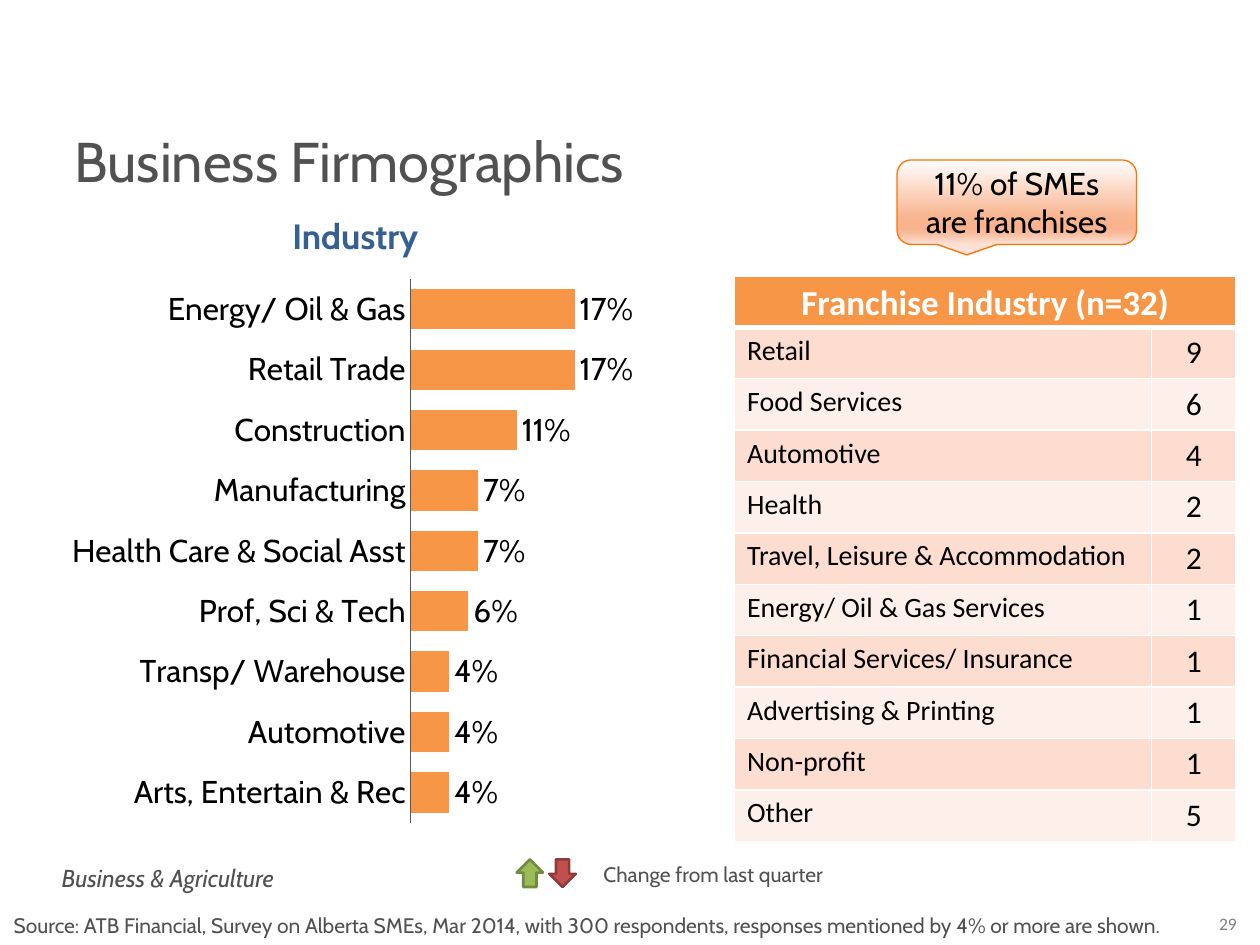
from lxml import etree
from pptx import Presentation
from pptx.chart.data import CategoryChartData
from pptx.dml.color import RGBColor
from pptx.enum.chart import XL_CHART_TYPE, XL_LABEL_POSITION, XL_TICK_LABEL_POSITION, XL_TICK_MARK
from pptx.enum.shapes import MSO_SHAPE
from pptx.enum.text import MSO_ANCHOR, PP_ALIGN
from pptx.oxml import parse_xml
from pptx.oxml.ns import nsdecls, qn
from pptx.util import Inches, Pt

LEFT, CENTER = PP_ALIGN.LEFT, PP_ALIGN.CENTER
TOP, MIDDLE = MSO_ANCHOR.TOP, MSO_ANCHOR.MIDDLE
BAR = XL_CHART_TYPE.BAR_CLUSTERED
OUTSIDE_END = XL_LABEL_POSITION.OUTSIDE_END
NO_TICK, NO_LABELS = XL_TICK_MARK.NONE, XL_TICK_LABEL_POSITION.NONE
CALLOUT, DOWN_ARROW = MSO_SHAPE.ROUNDED_RECTANGULAR_CALLOUT, MSO_SHAPE.DOWN_ARROW

COLUMNS, ROWS = 100, 75
WIDTH, HEIGHT = Inches(10), Inches(7.5)
GRAY, ORANGE, WHITE, BLACK = "505150", "F79646", "FFFFFF", "000000"
BANDS = ["FCDDCF", "FDEFE9"]
CALLOUT_STOPS = [(0, "FFFEFE"), (68, "F9B590"), (81, "F9B38C"), (86, "F9BA99"), (100, "FCE1D6")]
INDUSTRIES = [
    ("Energy/ Oil & Gas", 0.17), ("Retail Trade", 0.17), ("Construction", 0.11),
    ("Manufacturing", 0.07), ("Health Care & Social Asst", 0.07), ("Prof, Sci & Tech", 0.06),
    ("Transp/ Warehouse", 0.04), ("Automotive", 0.04), ("Arts, Entertain & Rec", 0.04),
]
FRANCHISES = [
    ("Retail", 9), ("Food Services", 6), ("Automotive", 4), ("Health", 2),
    ("Travel, Leisure & Accommodation", 2), ("Energy/ Oil & Gas Services", 1),
    ("Financial Services/ Insurance", 1), ("Advertising & Printing", 1),
    ("Non-profit", 1), ("Other", 5),
]


def color(hex_string):
    return RGBColor.from_string(hex_string)


def across(columns):
    return round(WIDTH * columns / COLUMNS)


def down(rows):
    return round(HEIGHT * rows / ROWS)


def place(box):
    left, top, width, height = box
    return across(left), down(top), across(width), down(height)


def style_font(font, size, hex_string, name="Cabin", bold=False, italic=False):
    font.name, font.size, font.bold, font.italic = name, Pt(size), bold, italic
    font.color.rgb = color(hex_string)


def write(frame, text, size, hex_string, align=LEFT, **style):
    paragraph = frame.paragraphs[0]
    paragraph.alignment = align
    run = paragraph.add_run()
    run.text = text
    style_font(run.font, size, hex_string, **style)


def add_text(slide, box, text, size, hex_string=GRAY, align=LEFT, **style):
    frame = slide.shapes.add_textbox(*place(box)).text_frame
    frame.word_wrap = True
    write(frame, text, size, hex_string, align, **style)
    return frame


def add_title(slide, box, text):
    title = slide.shapes.title
    title.left, title.top, title.width, title.height = place(box)
    title.text_frame.vertical_anchor = TOP
    write(title.text_frame, text, 32, GRAY)


def add_outlined(slide, kind, box, line, line_width):
    shape = slide.shapes.add_shape(kind, *place(box))
    shape.shadow.inherit = False
    shape.line.color.rgb = color(line)
    shape.line.width = Pt(line_width)
    return shape


def set_plot_area(chart, x, y, width, height):
    values = {"layoutTarget": "inner", "xMode": "edge", "yMode": "edge",
              "x": x, "y": y, "w": width, "h": height}
    settings = "".join(f'<c:{key} val="{value}"/>' for key, value in values.items())
    layout = parse_xml(
        f'<c:layout {nsdecls("c")}><c:manualLayout>{settings}</c:manualLayout></c:layout>')
    plot_area = chart.plots[0]._element.getparent()
    for old in plot_area.findall(qn("c:layout")):
        plot_area.remove(old)
    plot_area.insert(0, layout)


def add_industry_chart(slide, box):
    data = CategoryChartData(number_format="0%")
    data.categories = [name for name, share in INDUSTRIES]
    data.add_series("Series 1", [share for name, share in INDUSTRIES])
    chart = slide.shapes.add_chart(BAR, *place(box), data).chart
    chart.has_title = chart.has_legend = False
    style_font(chart.font, 18, BLACK)

    category_axis, value_axis = chart.category_axis, chart.value_axis
    category_axis.reverse_order = True
    category_axis.major_tick_mark = category_axis.minor_tick_mark = NO_TICK
    category_axis.format.line.color.rgb = color("595959")
    value_axis.minimum_scale, value_axis.maximum_scale = 0, 0.3
    value_axis.has_major_gridlines = False
    value_axis.tick_label_position = NO_LABELS
    value_axis.visible = False

    plot = chart.plots[0]
    plot.gap_width = 50
    plot.vary_by_categories = False
    plot.has_data_labels = True
    labels = plot.data_labels
    labels.show_value = True
    labels.number_format, labels.number_format_is_linked = "0%", False
    labels.position = OUTSIDE_END
    style_font(labels.font, 18, BLACK)
    fill = plot.series[0].format.fill
    fill.solid()
    fill.fore_color.rgb = color(ORANGE)
    set_plot_area(chart, 0.574, 0, 0.426, 0.96)


def fill_cell(cell, hex_string, top=1, bottom=1):
    cell.fill.solid()
    cell.fill.fore_color.rgb = color(hex_string)
    properties = cell._tc.get_or_add_tcPr()
    for index, (side, width) in enumerate(zip("LRTB", (1, 1, top, bottom))):
        border = etree.Element(qn(f"a:ln{side}"), w=str(Pt(width)))
        paint = etree.SubElement(border, qn("a:solidFill"))
        etree.SubElement(paint, qn("a:srgbClr"), val=WHITE)
        properties.insert(index, border)


def add_franchise_table(slide, box):
    row_count = len(FRANCHISES) + 1
    table = slide.shapes.add_table(row_count, 2, *place(box)).table
    for column, width in zip(table.columns, (33.1, 6.7)):
        column.width = across(width)
    for row in table.rows:
        row.height = down(box[3] / row_count)

    header = table.cell(0, 0)
    header.merge(table.cell(0, 1))
    header.margin_top, header.margin_bottom = down(0.5), down(0.2)
    for cell in table.rows[0].cells:
        fill_cell(cell, ORANGE, bottom=3)
    write(header.text_frame, "Franchise Industry (n=32)", 20, WHITE, CENTER,
          name="Calibri", bold=True)

    for index, (industry, count) in enumerate(FRANCHISES):
        name_cell, count_cell = table.rows[index + 1].cells
        for cell in (name_cell, count_cell):
            fill_cell(cell, BANDS[index % 2], top=1 if index else 3)
        write(name_cell.text_frame, industry, 16, BLACK, name="Calibri")
        write(count_cell.text_frame, str(count), 18, BLACK, CENTER, name="Calibri")


def add_callout(slide, box, text):
    shape = add_outlined(slide, CALLOUT, box, "FE7300", 0.75)
    shape.fill.gradient()
    shape.fill.gradient_angle = 270
    stops = shape._element.spPr.find(f".//{qn('a:gsLst')}")
    for old in list(stops):
        stops.remove(old)
    for percent, hex_string in CALLOUT_STOPS:
        stop = etree.SubElement(stops, qn("a:gs"), pos=str(percent * 1000))
        etree.SubElement(stop, qn("a:srgbClr"), val=hex_string)
    shape.text_frame.word_wrap = True
    shape.text_frame.vertical_anchor = MIDDLE
    write(shape.text_frame, text, 18, BLACK, CENTER)


def add_change_legend(slide, box):
    left, top, width, height = box
    arrows = [("9BBB59", "738A42", 180), ("C0504D", "8E3B39", 0)]
    for index, (fill, line, rotation) in enumerate(arrows):
        arrow_box = (left + 2.6 * index, top + 0.3, 2.1, 2.2)
        arrow = add_outlined(slide, DOWN_ARROW, arrow_box, line, 1.5)
        arrow.rotation = rotation
        arrow.fill.solid()
        arrow.fill.fore_color.rgb = color(fill)
    frame = add_text(slide, (left + 5.6, top, width - 5.6, height), "Change from last quarter", 12)
    frame.margin_left = across(1.3)


def add_footer(slide):
    add_text(slide, (3.9, 68, 28.1, 3.4), "Business & Agriculture", 14, italic=True)
    add_text(slide, (0.1, 71.9, 99.9, 3), "Source: ATB Financial, Survey on Alberta SMEs, Mar 2014, "
             "with 300 respondents, responses mentioned by 4% or more are shown.", 12)
    add_text(slide, (95, 72, 4.9, 2.7), "29", 10, "808080", CENTER, name="Calibri")


def main():
    presentation = Presentation()
    presentation.slide_width, presentation.slide_height = WIDTH, HEIGHT
    slide = presentation.slides.add_slide(presentation.slide_layouts[5])
    add_title(slide, (4.9, 9.5, 58.4, 6.4), "Business Firmographics")
    add_text(slide, (15.4, 16.5, 25.6, 4.4), "Industry", 20, "376092", CENTER, bold=True)
    add_industry_chart(slide, (1.6, 22.1, 54, 45))
    add_franchise_table(slide, (58.3, 21.9, 39.8, 44.9))
    add_callout(slide, (71.2, 12.7, 19, 6.7), "11% of SMEs are franchises")
    add_change_legend(slide, (41, 67.9, 30, 3.1))
    add_footer(slide)
    presentation.save("out.pptx")


if __name__ == "__main__":
    main()
